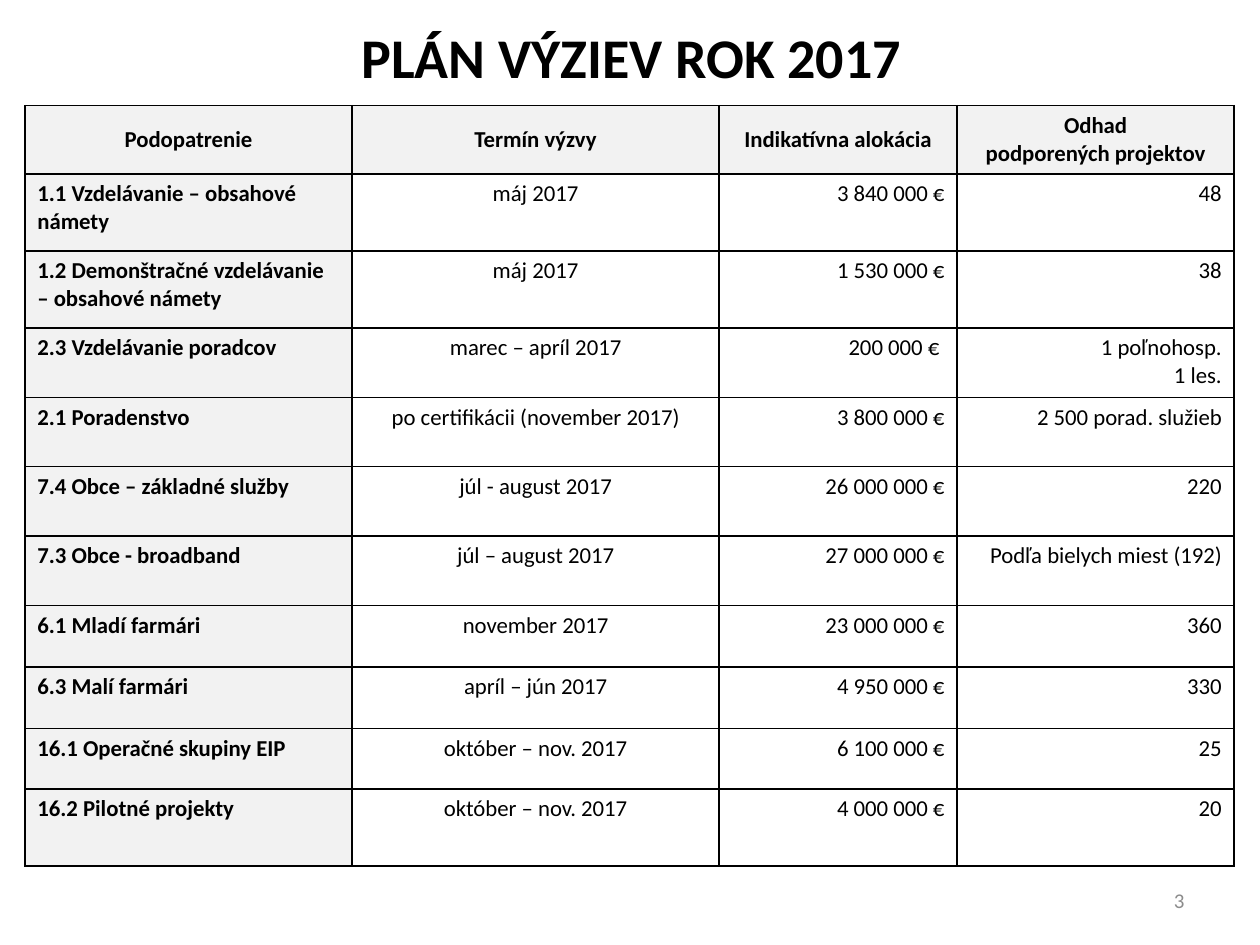
from lxml import etree
from pptx import Presentation
from pptx import util as u
from pptx.dml import color
from pptx.enum import text
from pptx.oxml import ns

COLORS = {"ink": "000000", "header": "F2F2F2", "number": "8C8C8C"}
FONT = "Calibri"
LEFT, CENTER, RIGHT = text.PP_ALIGN.LEFT, text.PP_ALIGN.CENTER, text.PP_ALIGN.RIGHT
MIDDLE, TOP = text.MSO_ANCHOR.MIDDLE, text.MSO_ANCHOR.TOP

COLUMN_WIDTHS = [6.6, 7.39, 4.8, 5.59]
ROW_HEIGHTS = [1.38] + [1.55] * 2 + [1.4] * 4 + [1.24] * 2 + [1.22, 1.55]
COLUMN_ALIGNMENTS = [LEFT, CENTER, RIGHT, RIGHT]
CALLS = [
    ["Podopatrenie", "Termín výzvy", "Indikatívna alokácia", "Odhad\npodporených projektov"],
    ["1.1 Vzdelávanie – obsahové námety", "máj 2017", "3 840 000 €", "48"],
    ["1.2 Demonštračné vzdelávanie – obsahové námety", "máj 2017", "1 530 000 €", "38"],
    ["2.3 Vzdelávanie poradcov", "marec – apríl 2017", "200 000 € ", "1 poľnohosp.\n1 les."],
    ["2.1 Poradenstvo", "po certifikácii (november 2017)", "3 800 000 €", "2 500 porad. služieb"],
    ["7.4 Obce – základné služby", "júl - august 2017", "26 000 000 €", "220"],
    ["7.3 Obce - broadband", "júl – august 2017", "27 000 000 €", "Podľa bielych miest (192)"],
    ["6.1 Mladí farmári", "november 2017", "23 000 000 €", "360"],
    ["6.3 Malí farmári", "apríl – jún 2017", "4 950 000 €", "330"],
    ["16.1 Operačné skupiny EIP", "október – nov. 2017", "6 100 000 €", "25"],
    ["16.2 Pilotné projekty", "október – nov. 2017", "4 000 000 €", "20"],
]


def set_attributes(target, values):
    for name, value in values.items():
        setattr(target, name, value)


def write_text(frame, content, size, alignment, bold=False, ink="ink"):
    frame.text = content
    for paragraph in frame.paragraphs:
        paragraph.alignment = alignment
        for run in paragraph.runs:
            set_attributes(run.font, {"name": FONT, "size": u.Pt(size), "bold": bold})
            run.font.color.rgb = color.RGBColor.from_string(COLORS[ink])


def add_borders(cell):
    properties = cell._tc.get_or_add_tcPr()
    for side in ("lnL", "lnR", "lnT", "lnB"):
        line = etree.SubElement(properties, ns.qn(f"a:{side}"), w=str(u.Pt(1)))
        fill = etree.SubElement(line, ns.qn("a:solidFill"))
        etree.SubElement(fill, ns.qn("a:srgbClr"), val=COLORS["ink"])


def format_cell(cell, content, row, column):
    is_header = row == 0
    is_shaded = is_header or column == 0
    alignment = CENTER if is_header else COLUMN_ALIGNMENTS[column]
    write_text(cell.text_frame, content, 13, alignment, bold=is_shaded)
    cell.vertical_anchor = MIDDLE if is_header else TOP
    # Borders come before the fill in the cell properties
    add_borders(cell)
    if is_shaded:
        cell.fill.solid()
        cell.fill.fore_color.rgb = color.RGBColor.from_string(COLORS["header"])
    else:
        cell.fill.background()


def add_title(slide):
    title = slide.shapes.title
    set_attributes(title, {"left": u.Cm(1.3), "top": u.Cm(0.13),
                           "width": u.Cm(22.86), "height": u.Cm(3.18)})
    write_text(title.text_frame, "PLÁN VÝZIEV ROK 2017", 32, CENTER, bold=True)
    # The deep bottom margin lifts the title clear of the table
    set_attributes(title.text_frame, {"vertical_anchor": MIDDLE, "margin_bottom": u.Cm(1.32),
                                      "auto_size": text.MSO_AUTO_SIZE.NONE})


def add_calls_table(slide):
    frame = slide.shapes.add_table(
        len(CALLS), len(COLUMN_WIDTHS), u.Cm(0.5), u.Cm(2.13),
        u.Cm(sum(COLUMN_WIDTHS)), u.Cm(sum(ROW_HEIGHTS)))
    table = frame.table
    for column, width in zip(table.columns, COLUMN_WIDTHS):
        column.width = u.Cm(width)
    for row, height in zip(table.rows, ROW_HEIGHTS):
        row.height = u.Cm(height)
    for row, contents in enumerate(CALLS):
        for column, content in enumerate(contents):
            format_cell(table.cell(row, column), content, row, column)


def add_slide_number(slide):
    box = slide.shapes.add_textbox(u.Cm(18.2), u.Cm(17.65), u.Cm(5.93), u.Cm(1.01))
    set_attributes(box.text_frame, {"word_wrap": True, "vertical_anchor": MIDDLE})
    write_text(box.text_frame, "3", 12, RIGHT, ink="number")


def main():
    presentation = Presentation()
    set_attributes(presentation, {"slide_width": u.Cm(25.4), "slide_height": u.Cm(19.05)})
    slide = presentation.slides.add_slide(presentation.slide_layouts[5])
    add_title(slide)
    add_calls_table(slide)
    add_slide_number(slide)
    presentation.save("out.pptx")


if __name__ == "__main__":
    main()
